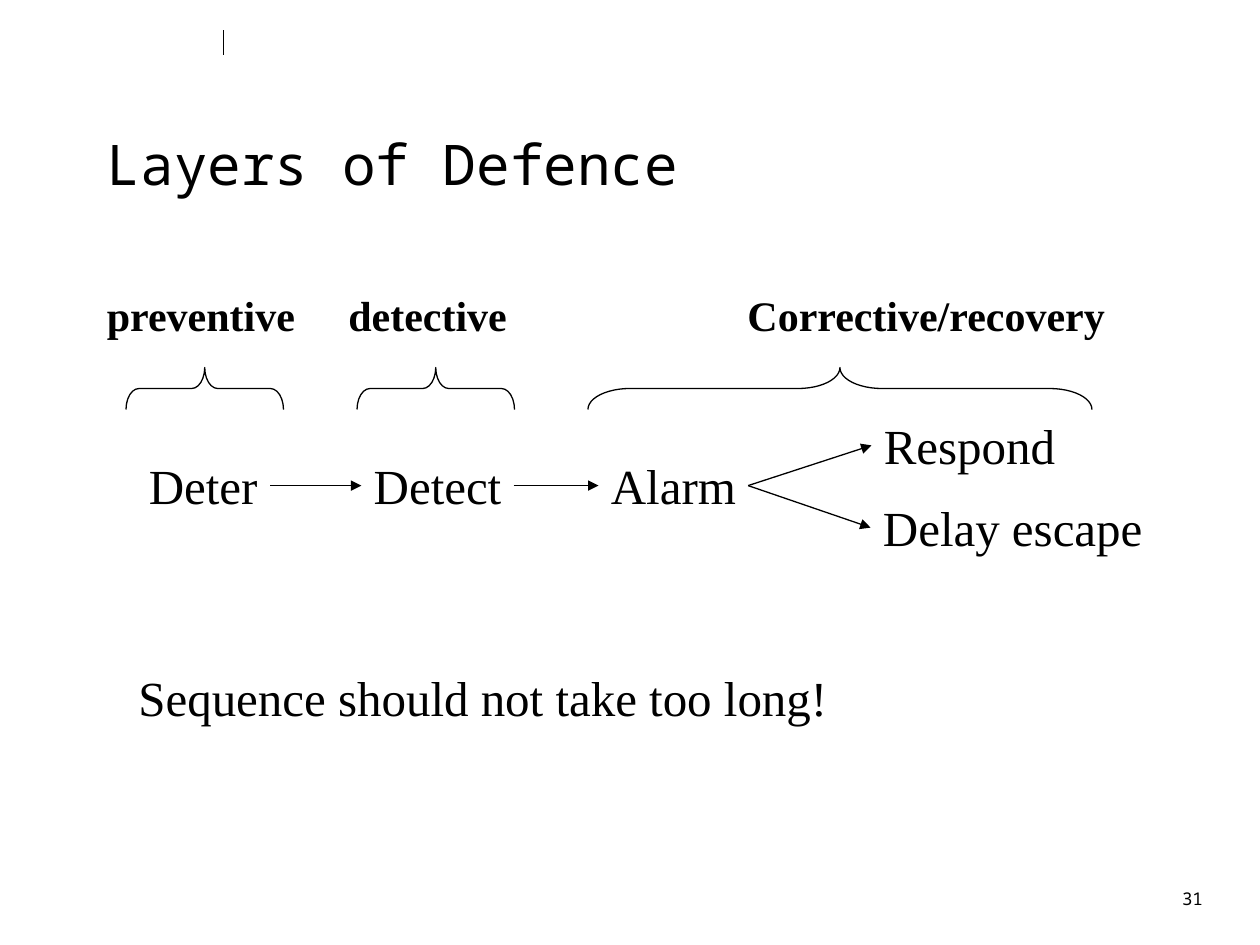
from lxml.etree import SubElement
from pptx import Presentation
from pptx.dml.color import RGBColor
from pptx.enum.shapes import MSO_CONNECTOR, MSO_SHAPE
from pptx.enum.text import MSO_ANCHOR, MSO_AUTO_SIZE, PP_ALIGN
from pptx.oxml.ns import qn
from pptx.util import Pt

COLORS = {"ink": "000000", "paper": "FFFFFF"}
MONO, SERIF = "Noto Sans Mono", "Times New Roman"
STEP_HEIGHT, LABEL_HEIGHT = 41, 36
STEP_TOP, LABEL_TOP = 257, 162
FLOW_Y = 277.5
BRACE_CENTER_Y, BRACE_DEPTH = 222, 24


def add_text(slide, text, left, top, width, height, size, font=SERIF, bold=False,
             wrap=False, align=PP_ALIGN.LEFT, anchor=MSO_ANCHOR.TOP):
    """Add a one-line text box."""
    box = slide.shapes.add_textbox(Pt(left), Pt(top), Pt(width), Pt(height))
    frame = box.text_frame
    frame.word_wrap = wrap
    frame.auto_size = MSO_AUTO_SIZE.NONE if wrap else MSO_AUTO_SIZE.SHAPE_TO_FIT_TEXT
    frame.vertical_anchor = anchor
    frame.text = text
    paragraph = frame.paragraphs[0]
    paragraph.alignment = align
    style = paragraph.runs[0].font
    style.name, style.size, style.bold = font, Pt(size), bold
    style.color.rgb = RGBColor.from_string(COLORS["ink"])


def add_line(slide, start, end, weight=0.75, arrow=True):
    """Draw a straight line, with an arrowhead at its end if asked."""
    line = slide.shapes.add_connector(
        MSO_CONNECTOR.STRAIGHT, *(Pt(value) for value in (*start, *end)))
    line.line.width = Pt(weight)
    line.line.color.rgb = RGBColor.from_string(COLORS["ink"])
    if arrow:
        SubElement(line.line._get_or_add_ln(), qn("a:tailEnd"), type="triangle")
    SubElement(line._element.spPr, qn("a:effectLst"))


def add_brace(slide, center_x, span, curve):
    """Lay a brace over the steps it groups, with its tip pointing up."""
    brace = slide.shapes.add_shape(
        MSO_SHAPE.RIGHT_BRACE, Pt(center_x - BRACE_DEPTH / 2),
        Pt(BRACE_CENTER_Y - span / 2), Pt(BRACE_DEPTH), Pt(span))
    brace.rotation = 270
    brace.adjustments[0], brace.adjustments[1] = curve, 0.5
    brace.shadow.inherit = False
    brace.fill.background()
    brace.line.width = Pt(0.75)
    brace.line.color.rgb = RGBColor.from_string(COLORS["ink"])


def main():
    """Build the layers of defence slide."""
    deck = Presentation()
    deck.slide_width, deck.slide_height = Pt(720), Pt(540)
    slide = deck.slides.add_slide(deck.slide_layouts[6])
    slide.background.fill.solid()
    slide.background.fill.fore_color.rgb = RGBColor.from_string(COLORS["paper"])

    add_line(slide, (127.5, 17.3), (127.5, 31.7), weight=0.5, arrow=False)
    add_text(slide, "Layers of Defence", 54, 48, 612, 90, 32, MONO,
             wrap=True, anchor=MSO_ANCHOR.MIDDLE)
    add_text(slide, "31", 544.5, 504, 150, 24, 10, MONO, wrap=True, align=PP_ALIGN.RIGHT)

    for step, left, top, width in (
            ("Deter", 78, STEP_TOP, 77),
            ("Detect", 206.5, STEP_TOP, 88),
            ("Alarm", 342, STEP_TOP, 87),
            ("Delay escape", 497.5, 281, 163),
            ("Respond", 498, 234, 113),
            ("Sequence should not take too long!", 72, 378, 409)):
        add_text(slide, step, left, top, width, STEP_HEIGHT, 28)

    for start_x, end in ((154.5, (206.5, FLOW_Y)), (293.5, (342, FLOW_Y)),
                         (427.5, (498, 254.5)), (427.5, (497.5, 301.5))):
        add_line(slide, (start_x, FLOW_Y), end)

    for layer, left, width, center_x, span, curve in (
            ("preventive", 54, 123, 117, 90, 0.31),
            ("detective", 192, 106, 249, 90, 0.31),
            ("Corrective/recovery", 420, 220, 480, 288, 1)):
        add_text(slide, layer, left, LABEL_TOP, width, LABEL_HEIGHT, 24, bold=True)
        add_brace(slide, center_x, span, curve)

    deck.save("out.pptx")


if __name__ == "__main__":
    main()
